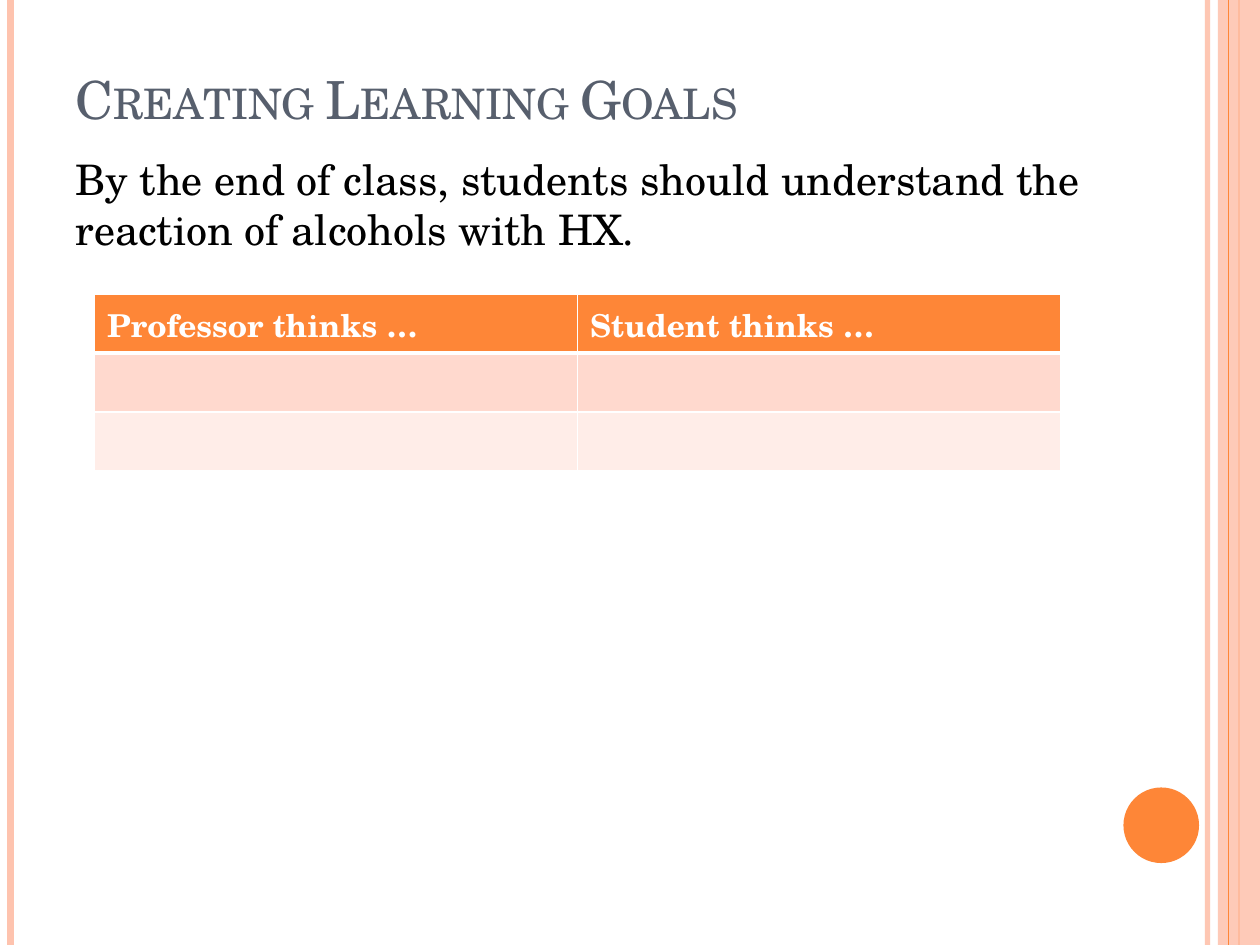
from lxml.etree import SubElement
from pptx import Presentation
from pptx.dml.color import RGBColor
from pptx.enum.shapes import MSO_CONNECTOR as Connector, MSO_SHAPE as Shape
from pptx.enum.text import MSO_ANCHOR as Anchor
from pptx.oxml.ns import qn
from pptx.util import Pt

WIDTH, HEIGHT = 720, 540
FONT = "TeX Gyre Schola"
COLORS = {
    "peach": "FEC3AE", "orange": "FE8637", "slate": "575F6D", "black": "000000",
    "white": "FFFFFF", "band dark": "FFD9CE", "band light": "FFEDE8",
}

TITLE = "Creating Learning Goals"
GOAL = "By the end of class, students should understand the reaction of alcohols with HX."
HEADINGS = ["Professor thinks …", "Student thinks …"]
ROW_FILLS = ["orange", "band dark", "band light"]

# x, colour, width, opacity in percent
LEFT_RULES = [(690, "peach", 3, 93), (6, "peach", 4.5, 100), (708, "orange", 1.5, 100)]
EDGE_RULE = (702, "orange", 0.75, 100)

TITLE_FORMAT = {"size": Pt(30), "name": FONT}
GOAL_FORMAT = {"size": Pt(24), "name": FONT}
HEADING_FORMAT = {"size": Pt(18), "name": FONT, "bold": True}

TABLE_LEFT, TABLE_TOP = 54, 168
COLUMN_WIDTH, ROW_HEIGHT = 276, 33.7


def rgb(name):
    return RGBColor.from_string(COLORS[name])


def set_opacity(fill, percent):
    color = fill._xPr.find(qn("a:solidFill"))[0]
    SubElement(color, qn("a:alpha"), val=str(percent * 1000))


def add_rule(slide, x, color, width, opacity):
    rule = slide.shapes.add_connector(Connector.STRAIGHT, Pt(x), 0, Pt(x), Pt(HEIGHT))
    rule.line.width = Pt(width)
    rule.line.color.rgb = rgb(color)
    if opacity < 100:
        set_opacity(rule.line.fill, opacity)
    SubElement(rule._element.spPr, qn("a:effectLst"))


def add_filled_shape(slide, kind, color, *box):
    shape = slide.shapes.add_shape(kind, *map(Pt, box))
    shape.shadow.inherit = False
    shape.fill.solid()
    shape.fill.fore_color.rgb = rgb(color)
    shape.line.fill.background()
    return shape


def write(text_frame, text, color, font_format):
    run = text_frame.paragraphs[0].add_run()
    run.text = text
    for name, value in font_format.items():
        setattr(run.font, name, value)
    run.font.color.rgb = rgb(color)
    return run


def add_text(slide, box, anchor, text, color, font_format):
    text_frame = slide.shapes.add_textbox(*map(Pt, box)).text_frame
    text_frame.word_wrap = True
    text_frame.vertical_anchor = anchor
    return write(text_frame, text, color, font_format), text_frame.paragraphs[0]


def set_borders(cell, widths):
    properties = cell._tc.get_or_add_tcPr()
    for index, (side, width) in enumerate(widths.items()):
        border = properties.makeelement(qn(f"a:ln{side}"), {"w": str(Pt(width))})
        fill = SubElement(border, qn("a:solidFill"))
        SubElement(fill, qn("a:srgbClr"), val=COLORS["white"])
        properties.insert(index, border)


def add_thoughts_table(slide):
    rows, columns = len(ROW_FILLS), len(HEADINGS)
    table = slide.shapes.add_table(
        rows, columns, Pt(TABLE_LEFT), Pt(TABLE_TOP),
        Pt(COLUMN_WIDTH * columns), Pt(ROW_HEIGHT * rows)).table
    for column in table.columns:
        column.width = Pt(COLUMN_WIDTH)
    for row_index, color in enumerate(ROW_FILLS):
        table.rows[row_index].height = Pt(ROW_HEIGHT)
        for column_index, heading in enumerate(HEADINGS):
            cell = table.cell(row_index, column_index)
            cell.fill.solid()
            cell.fill.fore_color.rgb = rgb(color)
            top, bottom = {0: (1, 3), 1: (3, 1)}.get(row_index, (1, 1))
            set_borders(cell, {"L": 1, "R": 1, "T": top, "B": bottom})
            if row_index == 0:
                write(cell.text_frame, heading, "white", HEADING_FORMAT)


def main():
    presentation = Presentation()
    presentation.slide_width, presentation.slide_height = Pt(WIDTH), Pt(HEIGHT)
    slide = presentation.slides.add_slide(presentation.slide_layouts[6])

    for rule in LEFT_RULES:
        add_rule(slide, *rule)
    band = add_filled_shape(slide, Shape.RECTANGLE, "peach", 696, 0, 24, HEIGHT)
    set_opacity(band.fill, 87)
    add_rule(slide, *EDGE_RULE)
    add_filled_shape(slide, Shape.OVAL, "orange", 642, 450, 43.2, 43.2)

    title, _ = add_text(slide, (36, 21.6, 588, 56), Anchor.BOTTOM,
                        TITLE, "slate", TITLE_FORMAT)
    title.font._element.set("cap", "small")
    _, paragraph = add_text(slide, (36, 84, 588, 420), Anchor.TOP,
                            GOAL, "black", GOAL_FORMAT)
    paragraph.space_before = Pt(6)
    add_thoughts_table(slide)
    presentation.save("out.pptx")


if __name__ == "__main__":
    main()
